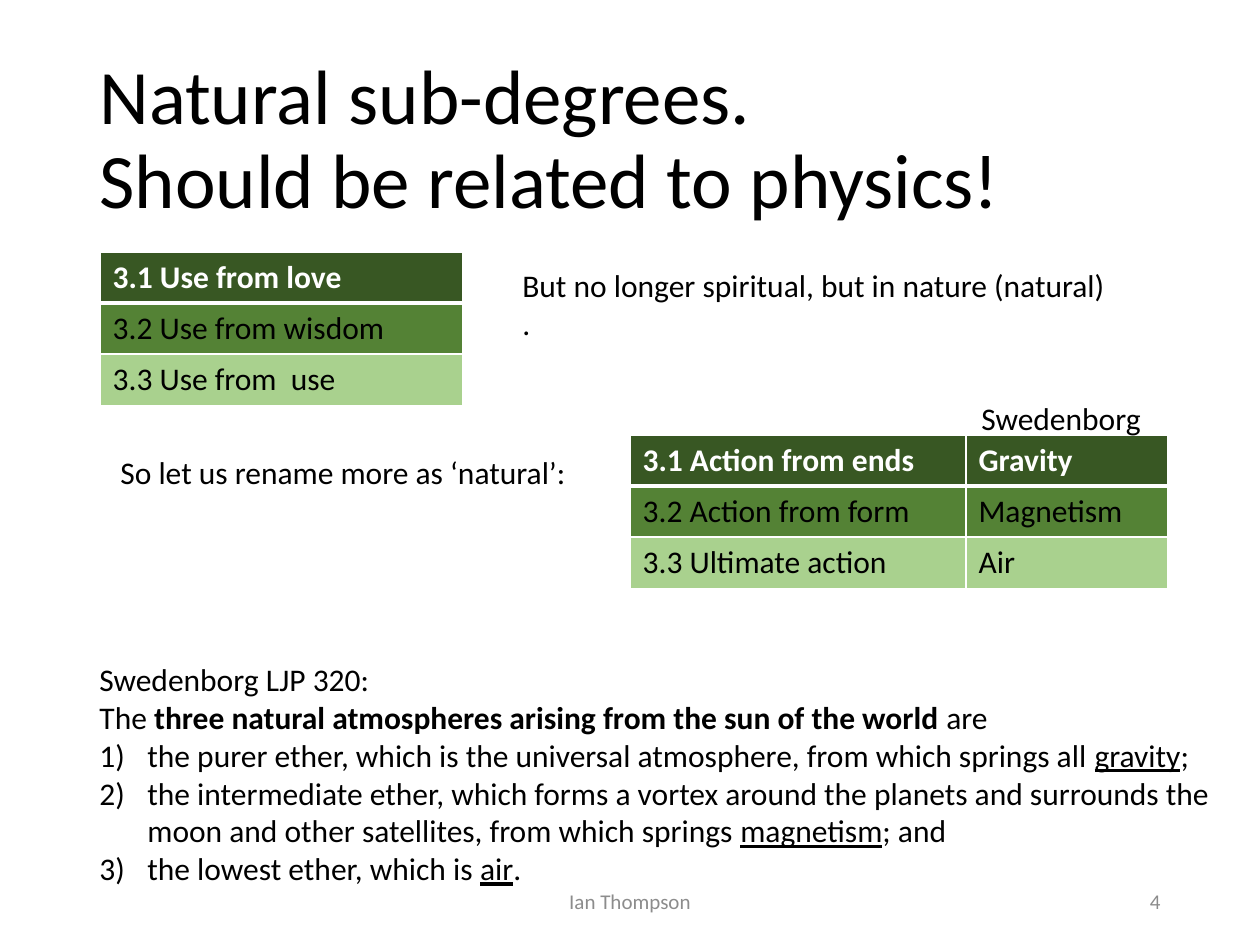
import pptx
import pptx.dml.color
import pptx.enum.text
import pptx.oxml
import pptx.oxml.ns
import pptx.util

PX = 914400 / 126
FONT = "Calibri"
BLACK, WHITE, GREY = "000000", "FFFFFF", "8C8C8C"
ROW_FILLS = ["385723", "548235", "A9D18E"]
ROW_HEIGHT = 51
BOLD, UNDERLINE = {"bold": True}, {"underline": True}
MIDDLE = pptx.enum.text.MSO_ANCHOR.MIDDLE
ALIGN = pptx.enum.text.PP_ALIGN

# A paragraph is a list of (text, font format) runs.
TITLE = [[("Natural sub-degrees.", {}), ("\n", {}), ("Should be related to physics!", {})]]
REMARK = [[("But no longer spiritual, but in nature (natural)", {})], [(".", {})]]
RENAME = [[("So let us rename more as ‘natural’:", {})]]
COLUMN_LABEL = [[("Swedenborg", {})]]
FOOTER = [[("Ian Thompson", {})]]
SLIDE_NUMBER = [[("4", {})]]
QUOTE = [
    [("Swedenborg LJP 320:", {})],
    [("The ", {}),
     ("three natural atmospheres arising from the sun of the world ", BOLD),
     ("are", {})],
    [("the purer ether, which is the universal atmosphere, from which springs all ", {}),
     ("gravity", UNDERLINE), (";", {})],
    [("the intermediate ether, which forms a vortex around the planets and surrounds the "
      "moon and other satellites, from which springs ", {}),
     ("magnetism", UNDERLINE), ("; and", {})],
    [("the lowest ether, which is ", {}), ("air", UNDERLINE), (".", {})],
]
SMALL = {"size": 12, "color": GREY, "anchor": MIDDLE}

# (left, top, width, height), paragraphs, options
TEXTS = [
    ((87, 50, 1086, 183), TITLE, {"size": 44, "anchor": MIDDLE, "spacing": 0.9}),
    ((510, 260, 682, 89), REMARK, {}),
    ((108, 447, 473, 50), RENAME, {"wrap": False}),
    ((87, 654, 1140, 242), QUOTE, {"numbered_from": 2}),
    ((969, 393, 186, 50), COLUMN_LABEL, {"wrap": False}),
    ((890, 876, 283, 50), SLIDE_NUMBER, {**SMALL, "align": ALIGN.RIGHT}),
    ((417, 876, 426, 50), FOOTER, {**SMALL, "align": ALIGN.CENTER}),
]

# (left, top), column widths, rows
TABLES = [
    ((100, 252), [363], [["3.1 Use from love"], ["3.2 Use from wisdom"], ["3.3 Use from  use"]]),
    ((630, 435), [336, 202], [["3.1 Action from ends", "Gravity"],
                              ["3.2 Action from form", "Magnetism"],
                              ["3.3 Ultimate action", "Air"]]),
]


def px(*lengths):
    return [pptx.util.Emu(round(n * PX)) for n in lengths]


def rgb(color):
    return pptx.dml.color.RGBColor.from_string(color)


def add_run(p, text, size, color, **formats):
    r = p.add_run()
    r.text = text
    r.font.color.rgb = rgb(color)
    formats = {"name": FONT, "size": pptx.util.Pt(size), **formats}
    for name, value in formats.items():
        setattr(r.font, name, value)


def number_paragraph(p):
    pPr = p._p.get_or_add_pPr()
    indent = px(48)[0]
    pPr.set("marL", str(indent))
    pPr.set("indent", str(-indent))
    number = pptx.oxml.parse_xml(
        f'<a:buAutoNum {pptx.oxml.ns.nsdecls("a")} type="arabicParenR"/>')
    pPr.append(number)


def add_text(slide, box, paragraphs, size=18, color=BLACK, wrap=True, anchor=None,
             align=None, spacing=None, numbered_from=None):
    tf = slide.shapes.add_textbox(*px(*box)).text_frame
    tf.word_wrap = wrap
    tf.vertical_anchor = anchor
    for i, runs in enumerate(paragraphs):
        p = tf.paragraphs[0] if i == 0 else tf.add_paragraph()
        p.alignment = align
        p.line_spacing = spacing
        if numbered_from is not None and i >= numbered_from:
            number_paragraph(p)
        for text, formats in runs:
            if text == "\n":
                p.add_line_break()
            else:
                add_run(p, text, size, color, **formats)


def add_borders(cell, widths):
    """Give the cell white borders; widths maps L, R, T, B to points."""
    tcPr = cell._tc.get_or_add_tcPr()
    for side, width in widths.items():
        tcPr.append(pptx.oxml.parse_xml(
            f'<a:ln{side} {pptx.oxml.ns.nsdecls("a")} w="{pptx.util.Pt(width)}">'
            f'<a:solidFill><a:srgbClr val="{WHITE}"/></a:solidFill></a:ln{side}>'))


def add_degree_table(slide, corner, widths, rows):
    size = sum(widths), ROW_HEIGHT * len(rows)
    table = slide.shapes.add_table(len(rows), len(widths), *px(*corner, *size)).table
    for column, width in zip(table.columns, px(*widths)):
        column.width = width
    for i, (texts, fill) in enumerate(zip(rows, ROW_FILLS)):
        table.rows[i].height = px(ROW_HEIGHT)[0]
        header = i == 0
        for j, text in enumerate(texts):
            cell = table.cell(i, j)
            add_borders(cell, {"L": 1, "R": 1, "T": 3 if i == 1 else 1, "B": 3 if header else 1})
            cell.fill.solid()
            cell.fill.fore_color.rgb = rgb(fill)
            add_run(cell.text_frame.paragraphs[0], text, 18,
                    WHITE if header else BLACK, bold=header)


def main():
    prs = pptx.Presentation()
    prs.slide_width, prs.slide_height = px(1260, 945)
    slide = prs.slides.add_slide(prs.slide_layouts[6])
    for corner, widths, rows in TABLES:
        add_degree_table(slide, corner, widths, rows)
    for box, paragraphs, options in TEXTS:
        add_text(slide, box, paragraphs, **options)
    prs.save("out.pptx")


if __name__ == "__main__":
    main()
